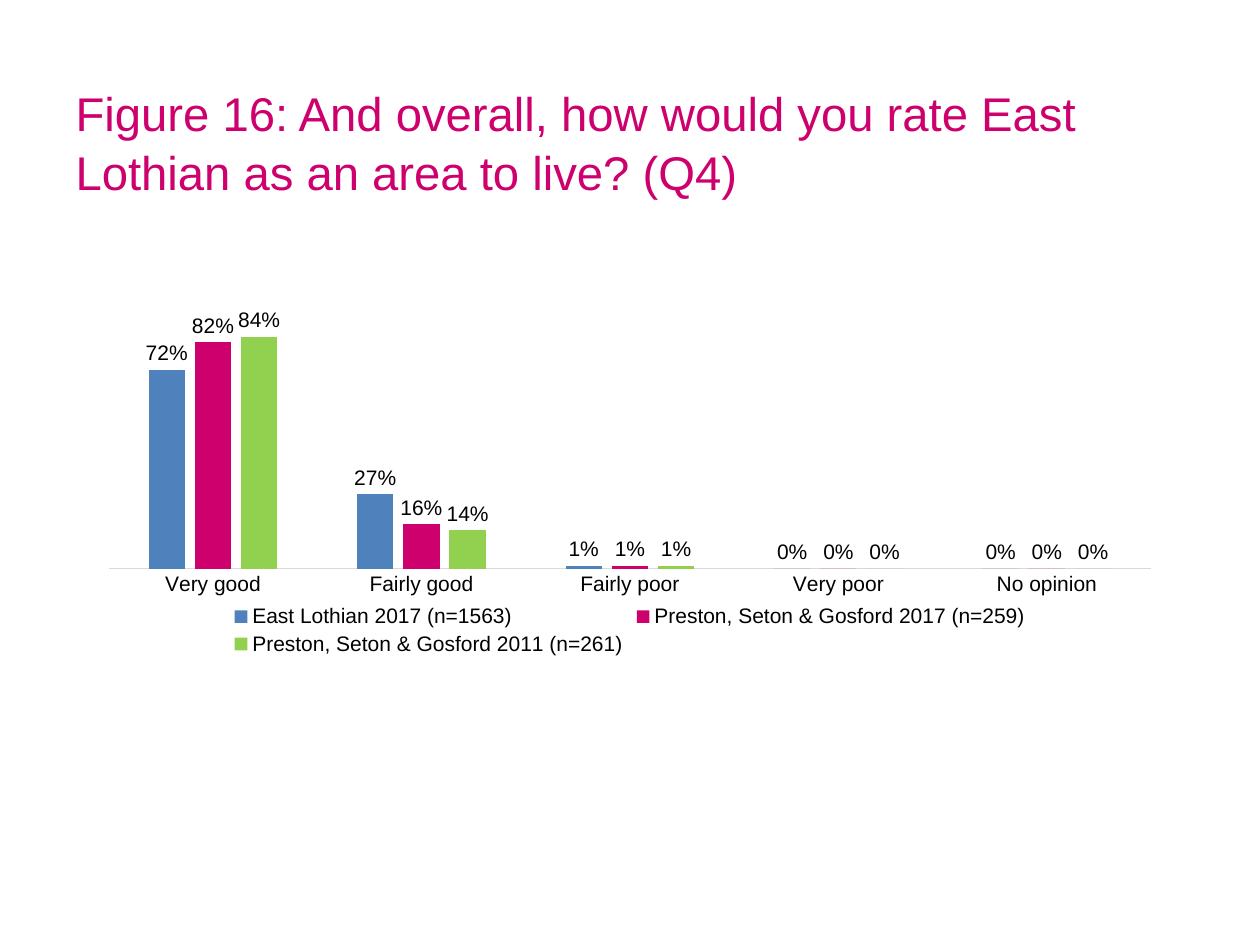
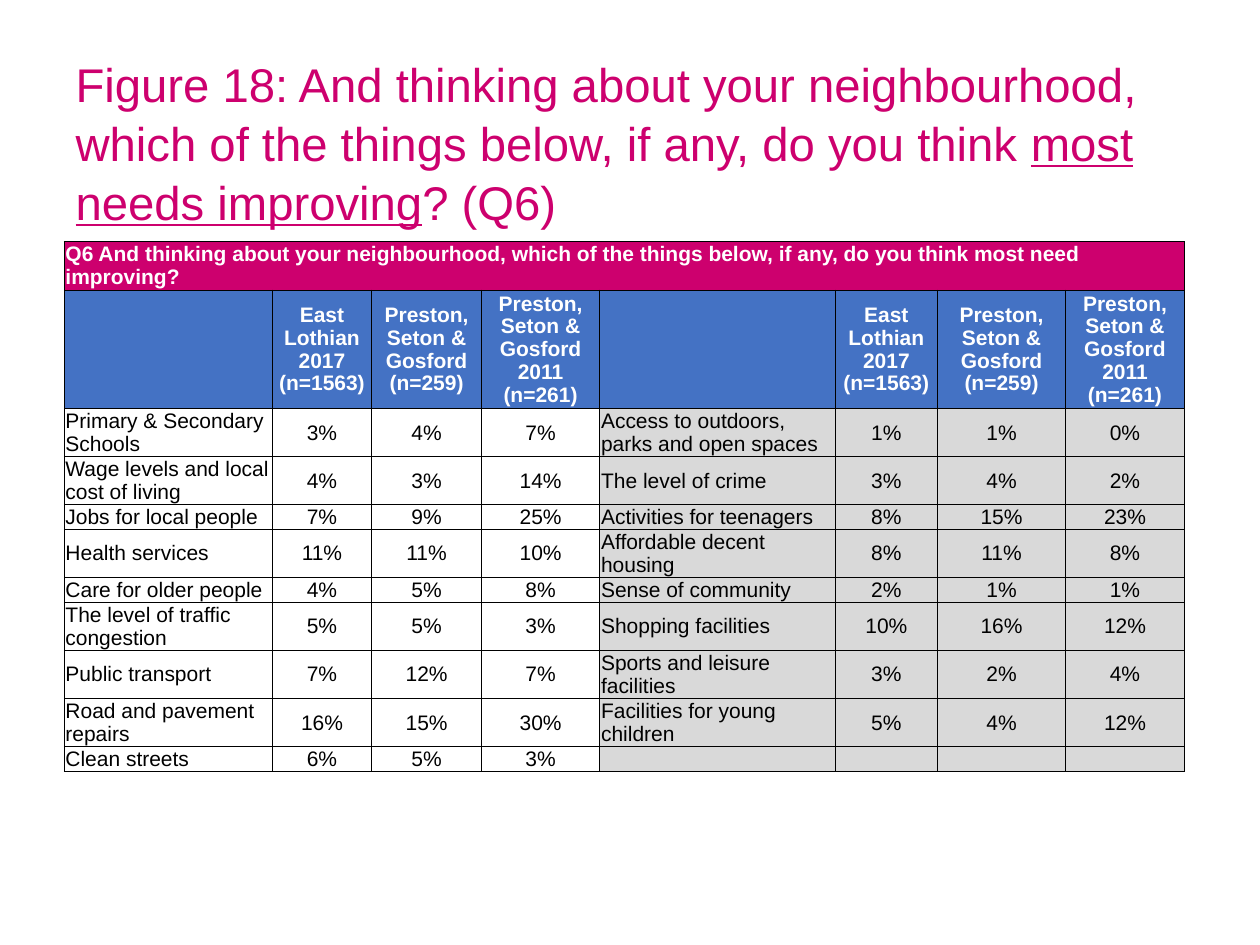
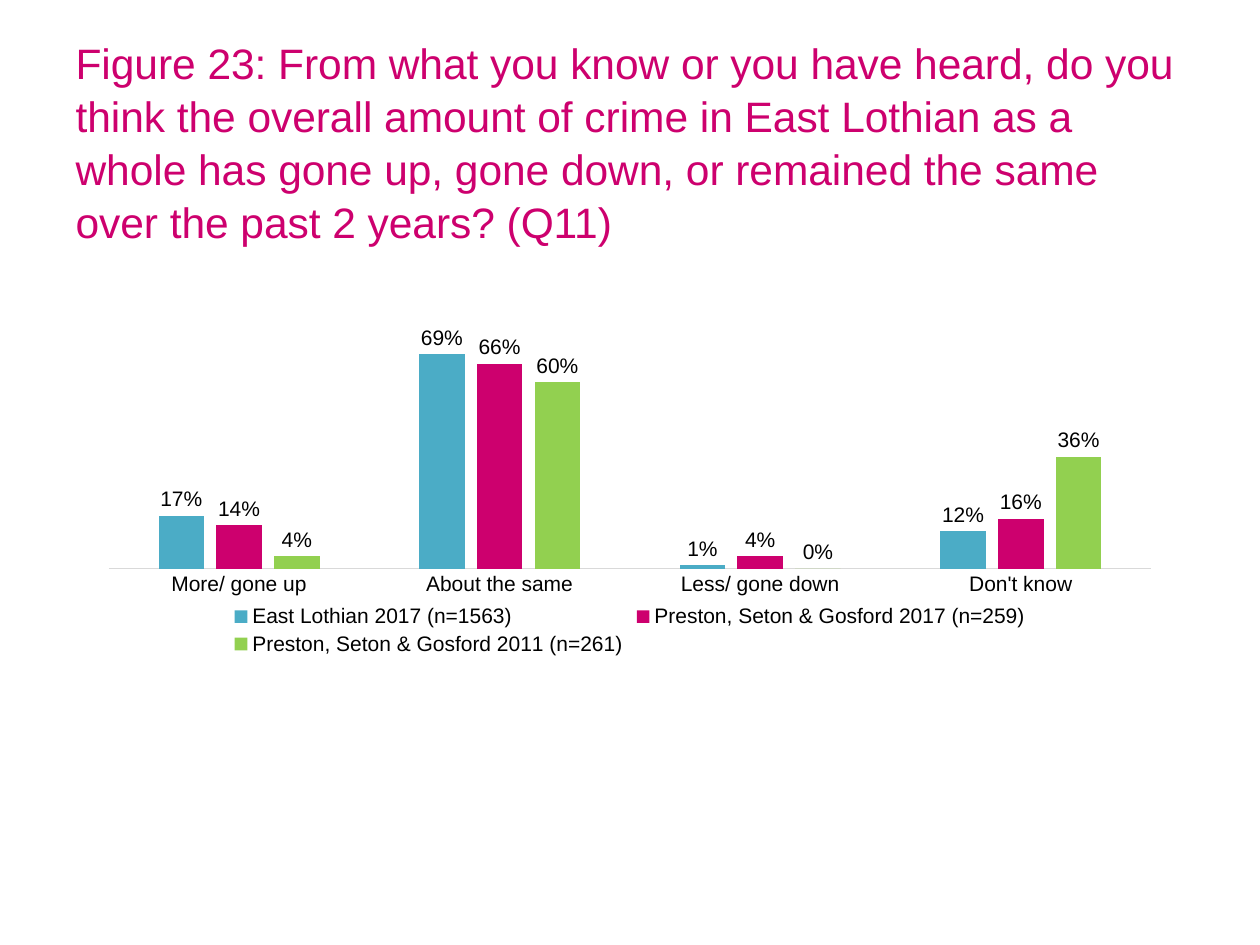
from lxml import etree
from pptx import Presentation
from pptx.chart.data import CategoryChartData
from pptx.dml.color import RGBColor
from pptx.enum.chart import XL_CHART_TYPE, XL_LABEL_POSITION, XL_LEGEND_POSITION, XL_TICK_MARK
from pptx.enum.text import MSO_ANCHOR, MSO_AUTO_SIZE, PP_ALIGN
from pptx.oxml.ns import qn
from pptx.util import Pt

CLUSTERED = XL_CHART_TYPE.COLUMN_CLUSTERED
OUTSIDE_END = XL_LABEL_POSITION.OUTSIDE_END
BOTTOM = XL_LEGEND_POSITION.BOTTOM
NO_TICK = XL_TICK_MARK.NONE
MIDDLE = MSO_ANCHOR.MIDDLE
LEFT, CENTER = PP_ALIGN.LEFT, PP_ALIGN.CENTER

FONT = "Arial"
BLACK = RGBColor(0x00, 0x00, 0x00)
WHITE = RGBColor(0xFF, 0xFF, 0xFF)
MAGENTA = RGBColor(0xCD, 0x00, 0x6E)
BLUE = RGBColor(0x4F, 0x81, 0xBD)
TEAL = RGBColor(0x4B, 0xAC, 0xC6)
GREEN = RGBColor(0x92, 0xD0, 0x50)
HEADER_BLUE = RGBColor(0x44, 0x72, 0xC4)
GREY = RGBColor(0xD9, 0xD9, 0xD9)

# left, top, width, height in points
TITLE_BOX = (36, 21.6, 648, 118)
CHART_BOX = (50.4, 162, 619.2, 215.3)
TABLE_BOX = (36.7, 138.2, 640, 302)
PLOT_LAYOUT = {"x": 0.019, "y": 0.097, "w": 0.962, "h": 0.66}

GROUPS = [
    "East Lothian 2017 (n=1563)",
    "Preston, Seton & Gosford 2017 (n=259)",
    "Preston, Seton & Gosford 2011 (n=261)",
]

RATINGS = {
    "Very good": (0.72, 0.82, 0.84),
    "Fairly good": (0.27, 0.16, 0.14),
    "Fairly poor": (0.01, 0.01, 0.01),
    "Very poor": (0, 0, 0),
    "No opinion": (0, 0, 0),
}
CRIME_VIEWS = {
    "More/ gone up": (0.17, 0.14, 0.04),
    "About the same": (0.69, 0.66, 0.6),
    "Less/ gone down": (0.01, 0.04, 0),
    "Don't know": (0.12, 0.16, 0.36),
}

QUESTION = ("Q6 And thinking about your neighbourhood, which of the things below, "
            "if any, do you think most need improving?")
HEADINGS = ["", GROUPS[0], "Preston, Seton & Gosford (n=259)", GROUPS[2]]
IMPROVEMENTS = [
    ("Primary & Secondary Schools", "3%", "4%", "7%",
     "Access to outdoors, parks and open spaces", "1%", "1%", "0%"),
    ("Wage levels and local cost of living", "4%", "3%", "14%",
     "The level of crime", "3%", "4%", "2%"),
    ("Jobs for local people", "7%", "9%", "25%",
     "Activities for teenagers", "8%", "15%", "23%"),
    ("Health services", "11%", "11%", "10%",
     "Affordable decent housing", "8%", "11%", "8%"),
    ("Care for older people", "4%", "5%", "8%",
     "Sense of community", "2%", "1%", "1%"),
    ("The level of traffic congestion", "5%", "5%", "3%",
     "Shopping facilities", "10%", "16%", "12%"),
    ("Public transport", "7%", "12%", "7%",
     "Sports and leisure facilities", "3%", "2%", "4%"),
    ("Road and pavement repairs", "16%", "15%", "30%",
     "Facilities for young children", "5%", "4%", "12%"),
    ("Clean streets", "6%", "5%", "3%", "", "", "", ""),
]
COLUMN_WIDTHS = [118.8, 57, 62.6, 67.7, 134.6, 58.3, 73.4, 67.7]
ROW_LINES = [2, 5, 2, 2, 1, 2, 1, 2, 2, 2, 1]
LINE_HEIGHT = 13.4
CELL_INSET = 0.72


def set_font(font, size, color, bold=False):
    font.name = FONT
    font.size = Pt(size)
    font.bold = bold
    font.color.rgb = color


def add_titled_slide(prs, parts, size=27):
    """Add a slide whose title is made of (text, underlined) parts."""
    slide = prs.slides.add_slide(prs.slide_layouts[5])
    title = slide.shapes.title
    title.left, title.top, title.width, title.height = map(Pt, TITLE_BOX)
    tf = title.text_frame
    tf.auto_size = MSO_AUTO_SIZE.NONE
    tf.vertical_anchor = MIDDLE
    p = tf.paragraphs[0]
    p.alignment = LEFT
    p.line_spacing = 1.04
    set_font(p.font, size, MAGENTA)
    for text, underlined in parts:
        r = p.add_run()
        r.text = text
        if underlined:
            r.font.underline = True
    return slide


def fix_plot_area(chart):
    """Place the inner plot area at fixed fractions of the chart."""
    area = chart.element.find(".//" + qn("c:plotArea"))
    for old in area.findall(qn("c:layout")):
        area.remove(old)
    layout = etree.Element(qn("c:layout"))
    manual = etree.SubElement(layout, qn("c:manualLayout"))
    settings = {"layoutTarget": "inner", "xMode": "edge", "yMode": "edge", **PLOT_LAYOUT}
    for tag, value in settings.items():
        etree.SubElement(manual, qn("c:" + tag)).set("val", str(value))
    area.insert(0, layout)


def add_column_chart(slide, box, answers, colors, maximum):
    data = CategoryChartData(number_format="0%")
    data.categories = list(answers)
    for name, values in zip(GROUPS, zip(*answers.values())):
        data.add_series(name, values)
    chart = slide.shapes.add_chart(CLUSTERED, *map(Pt, box), data).chart
    set_font(chart.font, 12, BLACK)
    chart.has_title = False
    chart.has_legend = True
    chart.legend.position = BOTTOM
    chart.legend.include_in_layout = False
    set_font(chart.legend.font, 12, BLACK)

    axis = chart.category_axis
    axis.major_tick_mark = NO_TICK
    axis.format.line.color.rgb = GREY
    axis.format.line.width = Pt(0.75)
    set_font(axis.tick_labels.font, 12, BLACK)
    scale = chart.value_axis
    scale.visible = False
    scale.has_major_gridlines = False
    scale.minimum_scale, scale.maximum_scale = 0, maximum

    plot = chart.plots[0]
    plot.gap_width = 219
    plot.overlap = -27
    plot.vary_by_categories = False
    for series, color in zip(plot.series, colors):
        series.format.fill.solid()
        series.format.fill.fore_color.rgb = color
        labels = series.data_labels
        labels.show_value = True
        labels.position = OUTSIDE_END
        labels.number_format = "0%"
        labels.number_format_is_linked = False
        set_font(labels.font, 12, BLACK)
    fix_plot_area(chart)


def add_borders(cell):
    tc_pr = cell._tc.get_or_add_tcPr()
    for side in ("lnL", "lnR", "lnT", "lnB"):
        line = etree.SubElement(tc_pr, qn("a:" + side), w=str(Pt(0.5)))
        fill = etree.SubElement(line, qn("a:solidFill"))
        etree.SubElement(fill, qn("a:srgbClr"), val=str(BLACK))


def format_cell(cell, text, fill, color, bold, alignment):
    add_borders(cell)
    cell.fill.solid()
    cell.fill.fore_color.rgb = fill
    cell.margin_left = cell.margin_right = cell.margin_top = Pt(CELL_INSET)
    cell.margin_bottom = 0
    cell.vertical_anchor = MIDDLE
    p = cell.text_frame.paragraphs[0]
    p.alignment = alignment
    p.line_spacing = 0.97
    set_font(p.font, 12, color, bold)
    if text:
        p.add_run().text = text
    else:
        etree.SubElement(p._p, qn("a:endParaRPr"), sz="1200")


def add_improvement_table(slide, box):
    rows = [[QUESTION] + [""] * 7, HEADINGS * 2, *IMPROVEMENTS]
    table = slide.shapes.add_table(len(rows), len(COLUMN_WIDTHS), *map(Pt, box)).table
    table.first_row = table.horz_banding = False
    for column, width in zip(table.columns, COLUMN_WIDTHS):
        column.width = Pt(width)
    for row, lines in zip(table.rows, ROW_LINES):
        row.height = Pt(lines * LINE_HEIGHT + CELL_INSET)
    table.cell(0, 0).merge(table.cell(0, len(COLUMN_WIDTHS) - 1))
    for i, texts in enumerate(rows):
        for j, text in enumerate(texts):
            header = i < 2
            if header:
                fill = (MAGENTA, HEADER_BLUE)[i]
            else:
                fill = WHITE if j < 4 else GREY
            format_cell(table.cell(i, j), text, fill, WHITE if header else BLACK,
                        header, CENTER if j % 4 else LEFT)


def main():
    prs = Presentation()
    prs.slide_width, prs.slide_height = Pt(720), Pt(540)

    slide = add_titled_slide(prs, [
        ("Figure 16: And overall, how would you rate East Lothian as an area to live? (Q4)", False)])
    add_column_chart(slide, CHART_BOX, RATINGS, (BLUE, MAGENTA, GREEN), 0.9)

    slide = add_titled_slide(prs, [
        ("Figure 18: And thinking about your neighbourhood, which of the things below, "
         "if any, do you think ", False),
        ("most needs improving", True),
        ("? (Q6)", False)])
    add_improvement_table(slide, TABLE_BOX)

    slide = add_titled_slide(prs, [
        ("Figure 23: From what you know or you have heard, do you think the overall amount "
         "of crime in East Lothian as a whole has gone up, gone down, or remained the same "
         "over the past 2 years? (Q11)", False)], 24.3)
    add_column_chart(slide, CHART_BOX, CRIME_VIEWS, (TEAL, MAGENTA, GREEN), 0.8)

    prs.save("out.pptx")


if __name__ == "__main__":
    main()
